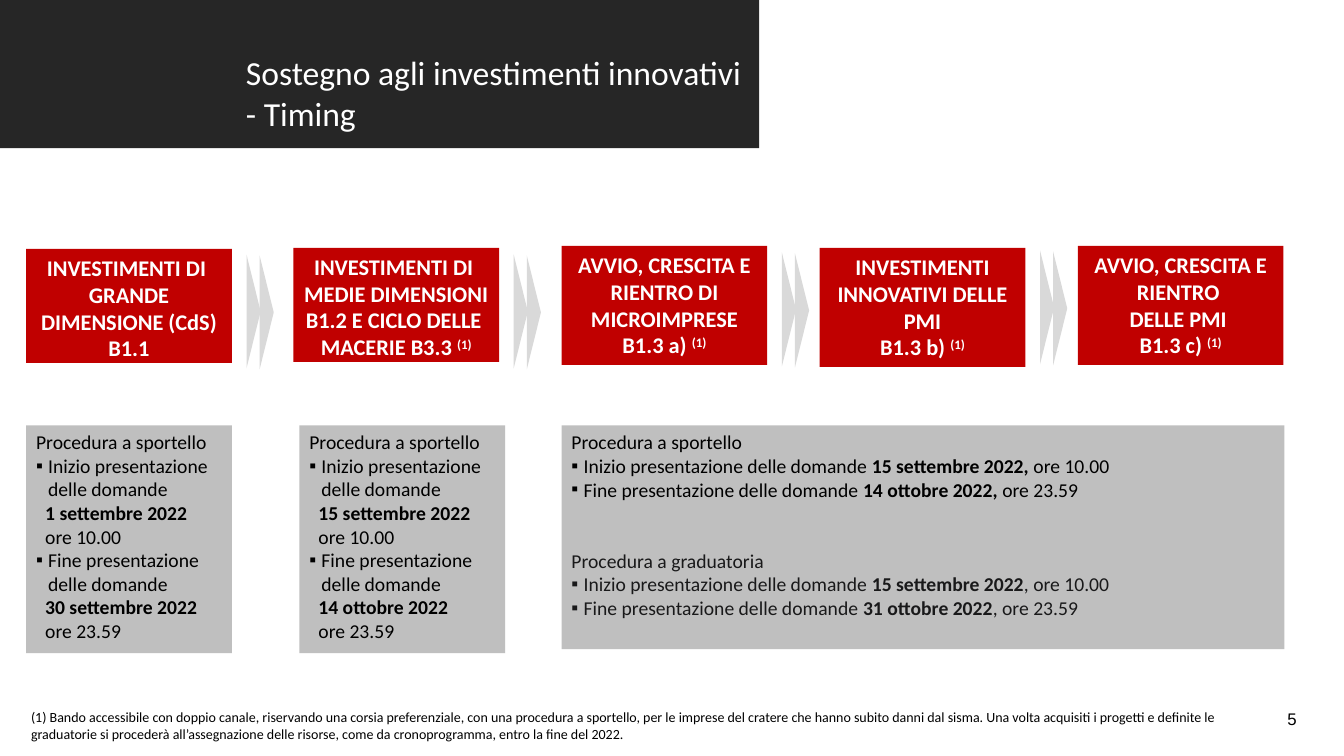
from dataclasses import dataclass

import pptx
import pptx.dml.color
import pptx.enum.shapes
import pptx.enum.text
import pptx.oxml.ns
import pptx.util
from lxml import etree

Inches = pptx.util.Inches
Align = pptx.enum.text.PP_ALIGN
Shape = pptx.enum.shapes.MSO_SHAPE

COLORS = {
    "banner": "262626", "phase": "C00000", "arrow": "D9D9D9", "panel": "BFBFBF",
    "white": "FFFFFF", "black": "000000", "ranking": "19191A",
}
CARD_WIDTH = 2.04
BULLET_INDENT = 0.12
DATE_INDENT = 0.09


@dataclass
class Phase:
    """A red box; ^ marks the start of superscript text."""
    left: float
    top: float
    height: float
    lines: list[str]


@dataclass
class Line:
    """A panel line; * switches bold on and off."""
    text: str
    bullet: bool = False
    indent: float = 0
    color: str = "black"
    gap: float = 0


@dataclass
class Panel:
    left: float
    width: float
    height: float
    lines: list[Line]


def window(start: str, end: str) -> list[Line]:
    """Lines of a narrow panel with opening and closing dates."""
    lines = [Line("Procedura a sportello")]
    for label, day, hour in (("Inizio", start, "10.00"), ("Fine", end, "23.59")):
        lines += [Line(f"{label} presentazione delle domande", bullet=True),
                  Line(f"*{day}*", indent=DATE_INDENT),
                  Line(f"ore {hour}", indent=DATE_INDENT)]
    return lines


PHASES = [
    Phase(0.26, 2.47, 1.13, ["INVESTIMENTI DI ", "GRANDE DIMENSIONE (CdS) B1.1"]),
    Phase(2.91, 2.46, 1.13, ["INVESTIMENTI DI ", "MEDIE DIMENSIONI B1.2 E CICLO DELLE ",
                             "MACERIE B3.3 ^(1)"]),
    Phase(5.57, 2.44, 1.18, ["AVVIO, CRESCITA E RIENTRO DI MICROIMPRESE", "B1.3 a) ^(1)"]),
    Phase(8.13, 2.46, 1.18, ["INVESTIMENTI INNOVATIVI DELLE PMI", "B1.3 b) ^(1)"]),
    Phase(10.69, 2.44, 1.18, ["AVVIO, CRESCITA E RIENTRO ", "DELLE PMI ", "B1.3 c) ^(1)"]),
]
ARROWS = [(1.95, 3.02), (4.6, 3.02), (7.26, 3), (9.82, 2.98)]
PANELS = [
    Panel(0.26, CARD_WIDTH, 2.26, window("1 settembre 2022", "30 settembre 2022")),
    Panel(2.97, CARD_WIDTH, 2.26, window("15 settembre 2022", "14 ottobre 2022")),
    Panel(5.57, 7.17, 2.22, [
        Line("Procedura a sportello"),
        Line("Inizio presentazione delle domande *15 settembre 2022, *ore 10.00", bullet=True),
        Line("Fine presentazione delle domande *14 ottobre 2022, *ore 23.59", bullet=True),
        Line("Procedura a graduatoria", color="ranking", gap=34),
        Line("Inizio presentazione delle domande *15 settembre 2022*, ore 10.00",
             bullet=True, color="ranking"),
        Line("Fine presentazione delle domande *31 ottobre 2022*, ore 23.59",
             bullet=True, color="ranking"),
    ]),
]
NOTE = ("(1) Bando accessibile con doppio canale, riservando una corsia preferenziale, con una "
        "procedura a sportello, per le imprese del cratere che hanno subito danni dal sisma. "
        "Una volta acquisiti i progetti e definite le graduatorie si procederà all’assegnazione "
        "delle risorse, come da cronoprogramma, entro la fine del 2022.")


def rgb(name: str) -> pptx.dml.color.RGBColor:
    return pptx.dml.color.RGBColor.from_string(COLORS[name])


def add_filled(page, kind, left: float, top: float, width: float, height: float, fill: str):
    box = page.shapes.add_shape(kind, Inches(left), Inches(top), Inches(width), Inches(height))
    box.shadow.inherit = False
    box.fill.solid()
    box.fill.fore_color.rgb = rgb(fill)
    box.line.fill.background()
    return box


def add_textbox(page, left: float, top: float, width: float, height: float):
    return page.shapes.add_textbox(Inches(left), Inches(top), Inches(width), Inches(height))


def write(box, text: str, *, size: float, color: str, font: str = "Calibri", bold: bool = False,
          align=Align.LEFT, bullet: bool = False, indent: float = 0, gap: float = 0) -> None:
    """Add one paragraph, filling the empty first one when there is no text yet."""
    frame = box.text_frame
    frame.word_wrap = True
    frame.vertical_anchor = pptx.enum.text.MSO_ANCHOR.TOP
    para = frame.add_paragraph() if frame.text else frame.paragraphs[0]
    para.alignment = align
    if gap:
        para.space_before = pptx.util.Pt(gap)
    if bullet or indent:
        margins = para._p.get_or_add_pPr()
        margins.set("marL", str(Inches(BULLET_INDENT if bullet else indent)))
        margins.set("indent", str(Inches(-BULLET_INDENT if bullet else 0)))
        if bullet:
            mark = etree.SubElement(margins, pptx.oxml.ns.qn("a:buFont"))
            mark.set("typeface", "Arial")
            mark = etree.SubElement(margins, pptx.oxml.ns.qn("a:buChar"))
            mark.set("char", "▪")
    body, _, raised = text.partition("^")
    pieces = [(piece, bold or number % 2 == 1, False)
              for number, piece in enumerate(body.split("*"))]
    pieces.append((raised, bold, True))
    for piece, heavy, superscript in pieces:
        if not piece:
            continue
        span = para.add_run()
        span.text = piece
        span.font.name = font
        span.font.size = pptx.util.Pt(size)
        span.font.bold = heavy
        span.font.color.rgb = rgb(color)
        if superscript:
            span.font._element.set("baseline", "30000")


def main() -> None:
    deck = pptx.Presentation()
    deck.slide_width, deck.slide_height = Inches(13.33), Inches(7.5)
    page = deck.slides.add_slide(deck.slide_layouts[6])

    # Title banner
    add_filled(page, Shape.RECTANGLE, 0, 0, 7.53, 1.47, "banner")
    title = add_textbox(page, 2.34, 0.47, 5.35, 0.48)
    for text in ("Sostegno agli investimenti innovativi", "- Timing"):
        write(title, text, size=24, color="white")

    # Phases and the double arrows between them
    for phase in PHASES:
        box = add_filled(page, Shape.RECTANGLE, phase.left, phase.top, CARD_WIDTH,
                         phase.height, "phase")
        for text in phase.lines:
            write(box, text, size=16, color="white", bold=True, align=Align.CENTER)
    for left, top in ARROWS:
        for step in range(2):
            arrow = add_filled(page, Shape.ISOSCELES_TRIANGLE, left + 0.13 * step,
                               top + 0.01 * step, 1.13, 0.14, "arrow")
            arrow.rotation = 90

    # Application windows
    for panel in PANELS:
        box = add_filled(page, Shape.RECTANGLE, panel.left, 4.22, panel.width,
                         panel.height, "panel")
        for line in panel.lines:
            write(box, line.text, size=14, color=line.color, bullet=line.bullet,
                  indent=line.indent, gap=line.gap)

    # Footnote and page number
    write(add_textbox(page, 0.21, 6.98, 12.34, 0.44), NOTE, size=10, color="black")
    write(add_textbox(page, 11.63, 6.98, 1.33, 0.52), "5", size=12, color="black",
          font="Arial", align=Align.RIGHT)

    deck.save("out.pptx")


if __name__ == "__main__":
    main()
